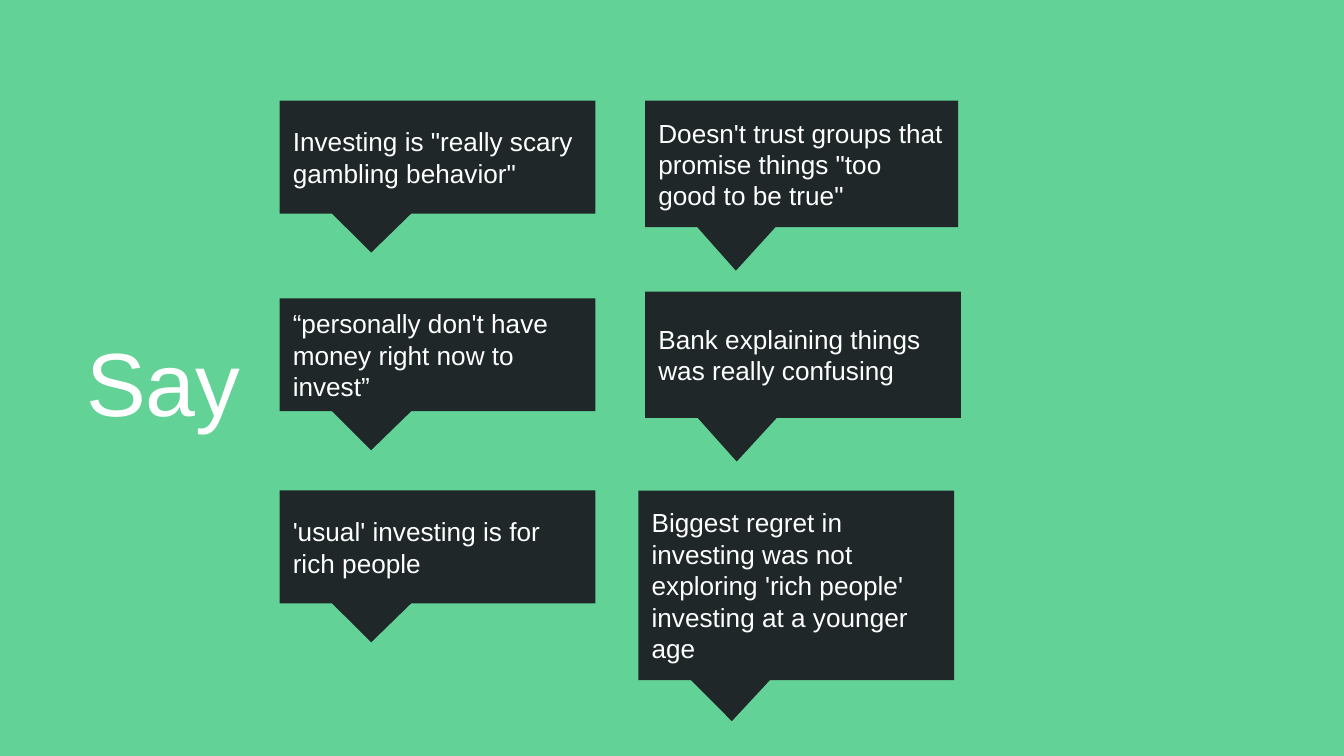
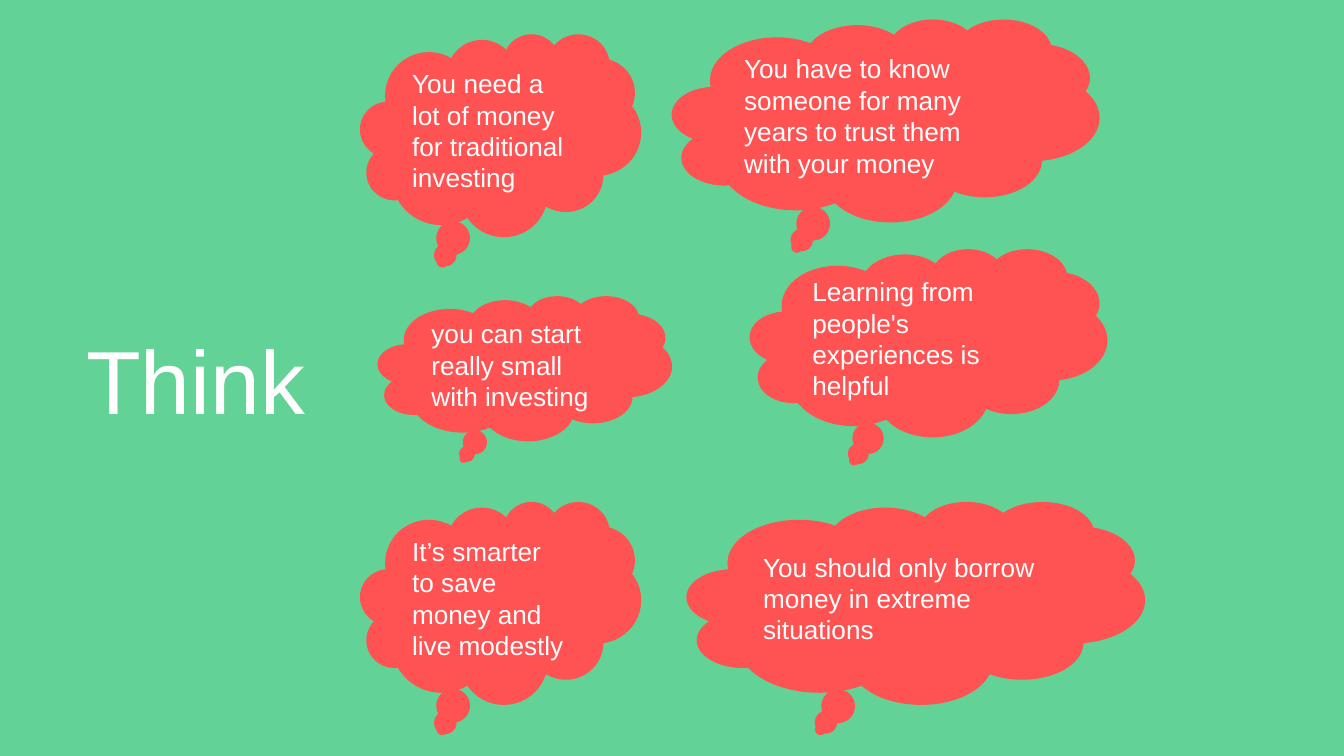
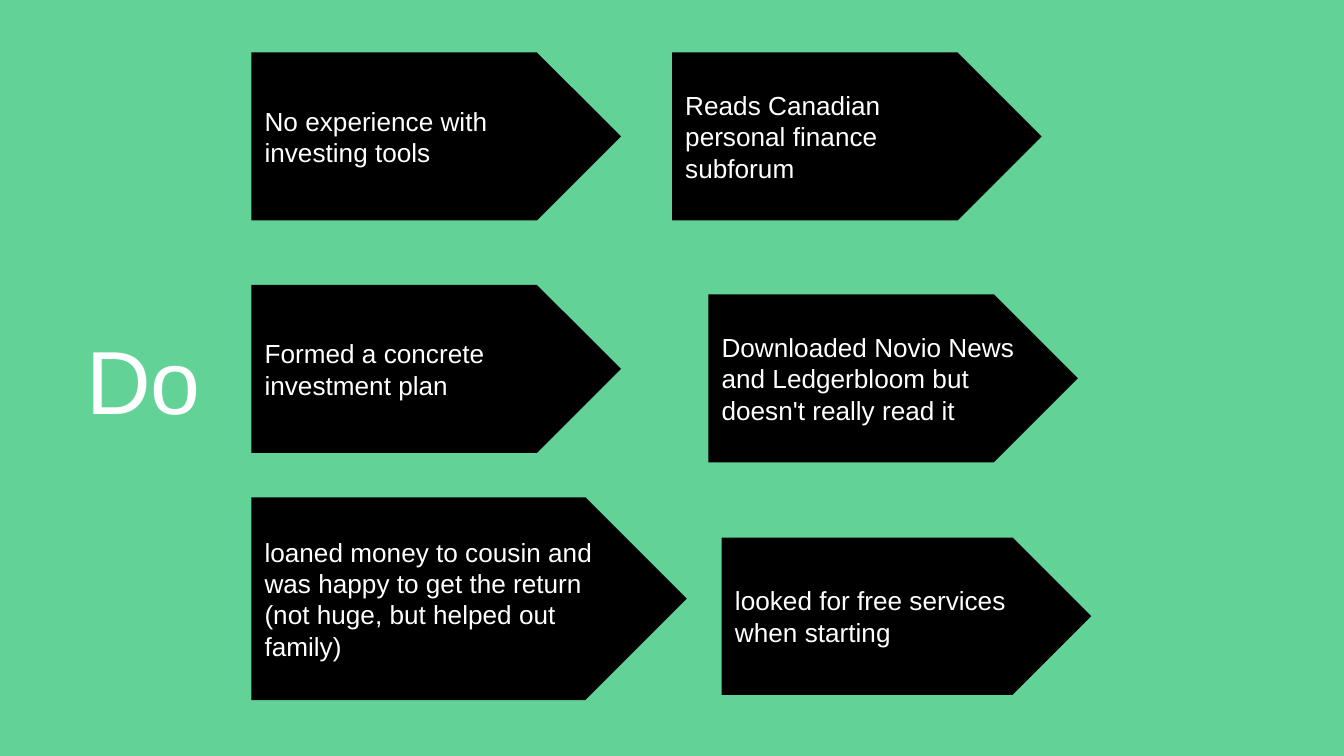
from pptx import Presentation
from pptx.dml.color import RGBColor
from pptx.enum.shapes import MSO_SHAPE as Shape
from pptx.enum.text import MSO_ANCHOR as Anchor, MSO_AUTO_SIZE as AutoSize, PP_ALIGN as Align
from pptx.util import Inches, Pt

GREEN, CHARCOAL, RED, BLACK, WHITE = "63D297", "202729", "FF5252", "000000", "FFFFFF"
SLIDE_WIDTH = 10
SLIDE_HEIGHT = SLIDE_WIDTH * 9 / 16
TITLE_LEFT, TITLE_TOP = 0.54, 0.58
TITLE_SIZE, BODY_SIZE = 48, 14
BUBBLE_WIDTH, ARROW_WIDTH = 2.35, 2.75
SPEECH_LEFT, ARROW_LEFT, CLOUD_LEFT = 2.08, 1.87, 2.68
SPEECH_TAIL = (-0.21, 0.845)

# Each note: text, left, top, width, height and, where it differs, its own adjustments
SLIDES = [
    {
        "title": "Say", "title_size": (1.42, 4.5),
        "shape": Shape.RECTANGULAR_CALLOUT, "fill": CHARCOAL, "adjustments": SPEECH_TAIL,
        "notes": [
            ('Investing is "really scary gambling behavior"', SPEECH_LEFT, 0.75, BUBBLE_WIDTH, 0.84),
            ('Doesn\'t trust groups that promise things "too good to be true"',
             4.8, 0.75, 2.33, 0.94),
            ("“personally don't have money right now to invest”",
             SPEECH_LEFT, 2.22, BUBBLE_WIDTH, 0.84),
            ("Bank explaining things was really confusing", 4.8, 2.17, BUBBLE_WIDTH, 0.94),
            ("'usual' investing is for rich people", SPEECH_LEFT, 3.65, BUBBLE_WIDTH, 0.84),
            ("Biggest regret in investing was not exploring 'rich people' investing at a younger age",
             4.75, 3.65, BUBBLE_WIDTH, 1.41, (-0.204, 0.717)),
        ],
    },
    {
        "title": "Think", "title_size": (2.14, 4.47),
        "shape": Shape.CLOUD_CALLOUT, "fill": RED, "adjustments": (-0.208, 0.625),
        "notes": [
            ("You need a lot of money for traditional investing", CLOUD_LEFT, 0.25, 2.09, 1.51),
            ("You have to know someone for many years to trust them with your money",
             5, 0.14, 3.18, 1.51),
            ("you can start really small with investing", 2.81, 2.2, 2.19, 1.08),
            ("Learning from people's experiences is helpful", 5.58, 1.85, 2.66, 1.4),
            ("It’s smarter to save money and live modestly", CLOUD_LEFT, 3.73, 2.09, 1.51),
            ("You should only borrow money in extreme situations", 5.11, 3.73, 3.41, 1.51),
        ],
    },
    {
        "title": "Do", "title_size": (6.34, 4.47),
        "shape": Shape.PENTAGON, "fill": BLACK, "adjustments": (0.5,),
        "notes": [
            ("No experience with investing tools", ARROW_LEFT, 0.39, ARROW_WIDTH, 1.25),
            ("Reads Canadian personal finance subforum", 5, 0.39, ARROW_WIDTH, 1.25),
            ("Formed a concrete investment plan", ARROW_LEFT, 2.12, ARROW_WIDTH, 1.25),
            ("Downloaded Novio News and Ledgerbloom but doesn't really read it",
             5.27, 2.19, ARROW_WIDTH, 1.25),
            ("loaned money to cousin and was happy to get the return "
             "(not huge, but helped out family)", ARROW_LEFT, 3.7, 3.24, 1.51),
            ("looked for free services when starting", 5.37, 4, ARROW_WIDTH, 1.17),
        ],
    },
]


def color(value):
    return RGBColor.from_string(value)


def set_attributes(target, values):
    for name, value in values.items():
        setattr(target, name, value)


def write_text(shape, text, size):
    frame = shape.text_frame
    frame.text = text
    margin = Inches(0.1)
    set_attributes(frame, {
        "word_wrap": True, "auto_size": AutoSize.NONE, "vertical_anchor": Anchor.MIDDLE,
        "margin_left": margin, "margin_top": margin,
        "margin_right": margin, "margin_bottom": margin,
    })
    paragraph = frame.paragraphs[0]
    paragraph.alignment = Align.LEFT
    font = paragraph.runs[0].font
    set_attributes(font, {"name": "Arial", "size": Pt(size)})
    font.color.rgb = color(WHITE)


def add_title(slide, text, width, height):
    title = slide.shapes.title
    set_attributes(title, {
        "left": Inches(TITLE_LEFT), "top": Inches(TITLE_TOP),
        "width": Inches(width), "height": Inches(height),
    })
    write_text(title, text, TITLE_SIZE)


def add_note(slide, kind, fill, adjustments, text, box):
    note = slide.shapes.add_shape(kind, *(Inches(length) for length in box))
    for index, value in enumerate(adjustments):
        note.adjustments[index] = value
    note.shadow.inherit = False
    note.fill.solid()
    note.fill.fore_color.rgb = color(fill)
    note.line.fill.background()
    write_text(note, text, BODY_SIZE)


def main():
    presentation = Presentation()
    set_attributes(presentation, {
        "slide_width": Inches(SLIDE_WIDTH), "slide_height": Inches(SLIDE_HEIGHT),
    })
    background = presentation.slide_master.background.fill
    background.solid()
    background.fore_color.rgb = color(GREEN)
    title_only = presentation.slide_layouts[5]

    for content in SLIDES:
        slide = presentation.slides.add_slide(title_only)
        add_title(slide, content["title"], *content["title_size"])
        for text, left, top, width, height, *own_adjustments in content["notes"]:
            adjustments = own_adjustments[0] if own_adjustments else content["adjustments"]
            add_note(slide, content["shape"], content["fill"], adjustments,
                     text, (left, top, width, height))

    presentation.save("out.pptx")


if __name__ == "__main__":
    main()
